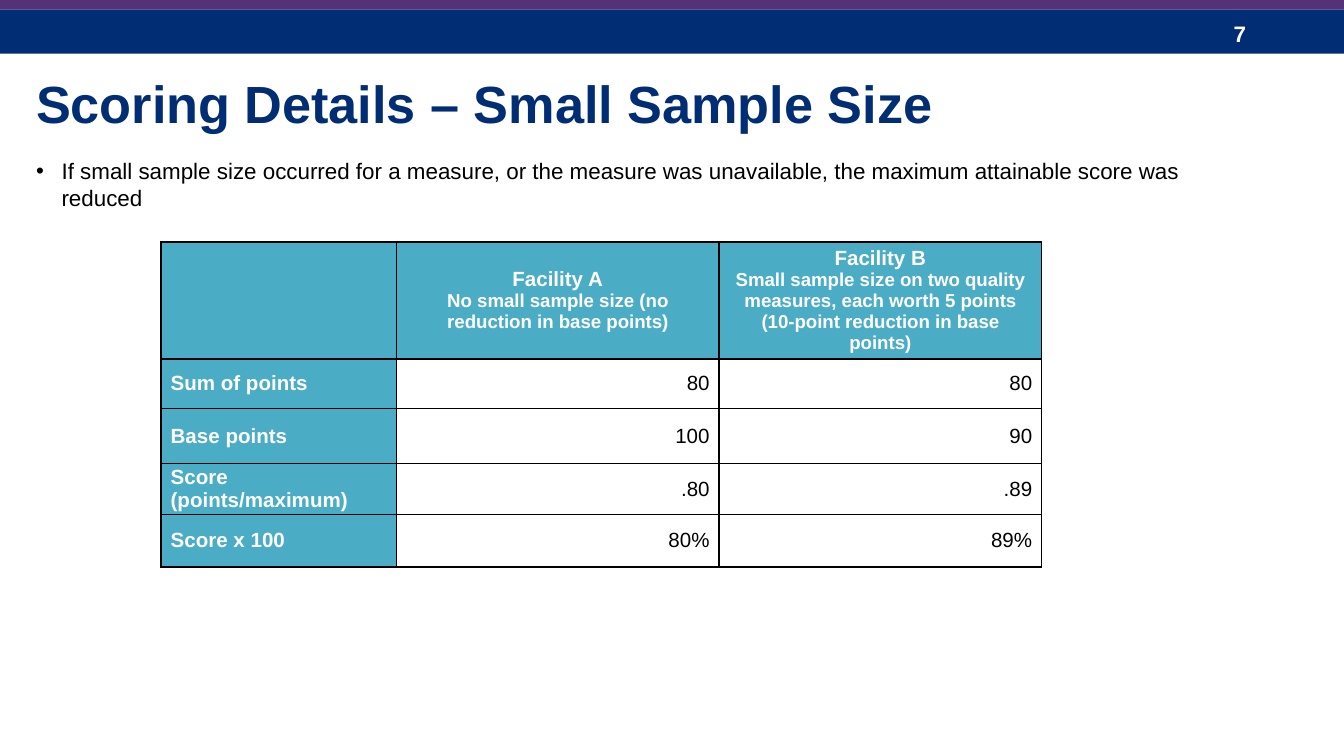
from lxml.etree import SubElement as Sub
from pptx import Presentation
from pptx.dml.color import RGBColor
from pptx.enum.shapes import MSO_SHAPE as Shape
from pptx.enum.text import MSO_ANCHOR as Anchor, PP_ALIGN as Align
from pptx.oxml.ns import qn
from pptx.util import Inches, Pt

NAVY, PURPLE, TEAL = "002D73", "553278", "4BACC6"
WHITE, BLACK = "FFFFFF", "000000"

COLS = [1.75, 2.4, 2.4]
ROWS = [0.87, 0.37, 0.41, 0.38, 0.39]
DATA = [
    ["",
     "Facility A\nNo small sample size (no reduction in base points)",
     "Facility B\nSmall sample size on two quality measures, "
     "each worth 5 points (10-point reduction in base points)"],
    ["Sum of points", "80", "80"],
    ["Base points", "100", "90"],
    ["Score (points/maximum)", ".80", ".89"],
    ["Score x 100", "80%", "89%"],
]


def color(code):
    return RGBColor.from_string(code)


def style(para, size, code, bold=False):
    font = para.font
    for item in [font] + [run.font for run in para.runs]:
        item.name, item.size, item.bold = "Arial", Pt(size), bold
        item.color.rgb = color(code)


def add_bar(slide, top, height, code):
    bar = slide.shapes.add_shape(
        Shape.RECTANGLE, 0, Inches(top), Inches(10), Inches(height))
    bar.shadow.inherit = False
    bar.fill.solid()
    bar.fill.fore_color.rgb = color(code)
    bar.line.fill.background()


def add_text(slide, box, text, size, code, bold=False, bullet=False):
    frame = slide.shapes.add_textbox(*map(Inches, box)).text_frame
    frame.word_wrap = True
    frame.vertical_anchor = Anchor.MIDDLE
    frame.text = text
    para = frame.paragraphs[0]
    if bullet:
        props = para._p.get_or_add_pPr()
        props.set("marL", str(Inches(0.19)))
        props.set("indent", str(-Inches(0.19)))
        Sub(props, qn("a:buFont"), typeface="Arial")
        Sub(props, qn("a:buChar"), char="•")
    style(para, size, code, bold)


def add_border(cell):
    props = cell._tc.get_or_add_tcPr()
    for side in ("lnL", "lnR", "lnT", "lnB"):
        line = Sub(props, qn("a:" + side), w=str(Pt(1)))
        fill = Sub(line, qn("a:solidFill"))
        Sub(fill, qn("a:srgbClr"), val=BLACK)


def fill_cell(cell, text, row, col):
    label = row == 0 or col == 0
    cell.margin_left = cell.margin_right = Inches(0.07)
    cell.margin_top = cell.margin_bottom = 0
    cell.vertical_anchor = Anchor.MIDDLE
    add_border(cell)
    if label:
        cell.fill.solid()
        cell.fill.fore_color.rgb = color(TEAL)
    else:
        cell.fill.background()
    cell.text_frame.text = text
    for i, para in enumerate(cell.text_frame.paragraphs):
        if col == 0:
            para.alignment = Align.LEFT
        else:
            para.alignment = Align.CENTER if row == 0 else Align.RIGHT
        style(para, 10 if i else 11, WHITE if label else BLACK, label)


def add_scores(slide, left, top):
    frame = slide.shapes.add_table(
        len(ROWS), len(COLS), Inches(left), Inches(top),
        Inches(sum(COLS)), Inches(sum(ROWS)))
    table = frame.table
    table.first_row = table.horz_banding = False
    for col, width in zip(table.columns, COLS):
        col.width = Inches(width)
    for row, height in zip(table.rows, ROWS):
        row.height = Inches(height)
    for r, line in enumerate(DATA):
        for c, text in enumerate(line):
            fill_cell(table.cell(r, c), text, r, c)


def main():
    # Widescreen page, 16:9
    prs = Presentation()
    prs.slide_width = Inches(10)
    prs.slide_height = Inches(10 * 9 / 16)
    slide = prs.slides.add_slide(prs.slide_layouts[6])

    # Header band with page number
    add_bar(slide, 0.07, 0.33, NAVY)
    add_text(slide, (9.08, 0.1, 0.75, 0.3), "7", 12, WHITE, bold=True)
    add_bar(slide, -0.02, 0.09, PURPLE)

    # Title
    add_text(slide, (0.17, 0.48, 9.5, 0.57),
             "Scoring Details – Small Sample Size", 28, NAVY, bold=True)

    # Score table
    add_scores(slide, 1.2, 1.8)

    # Bullet
    add_text(slide, (0.17, 1.12, 8.83, 0.5),
             "If small sample size occurred for a measure, or the measure was "
             "unavailable, the maximum attainable score was reduced",
             12, BLACK, bullet=True)

    prs.save("out.pptx")


if __name__ == "__main__":
    main()
